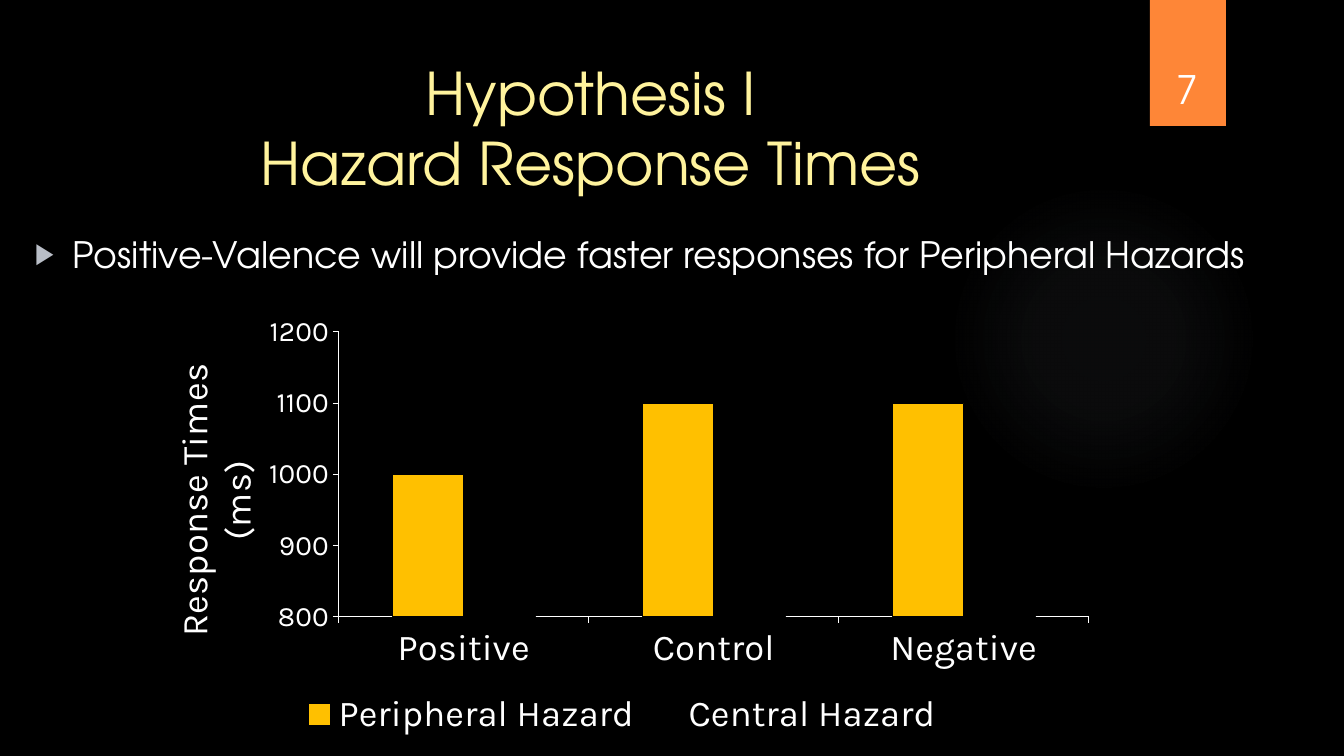
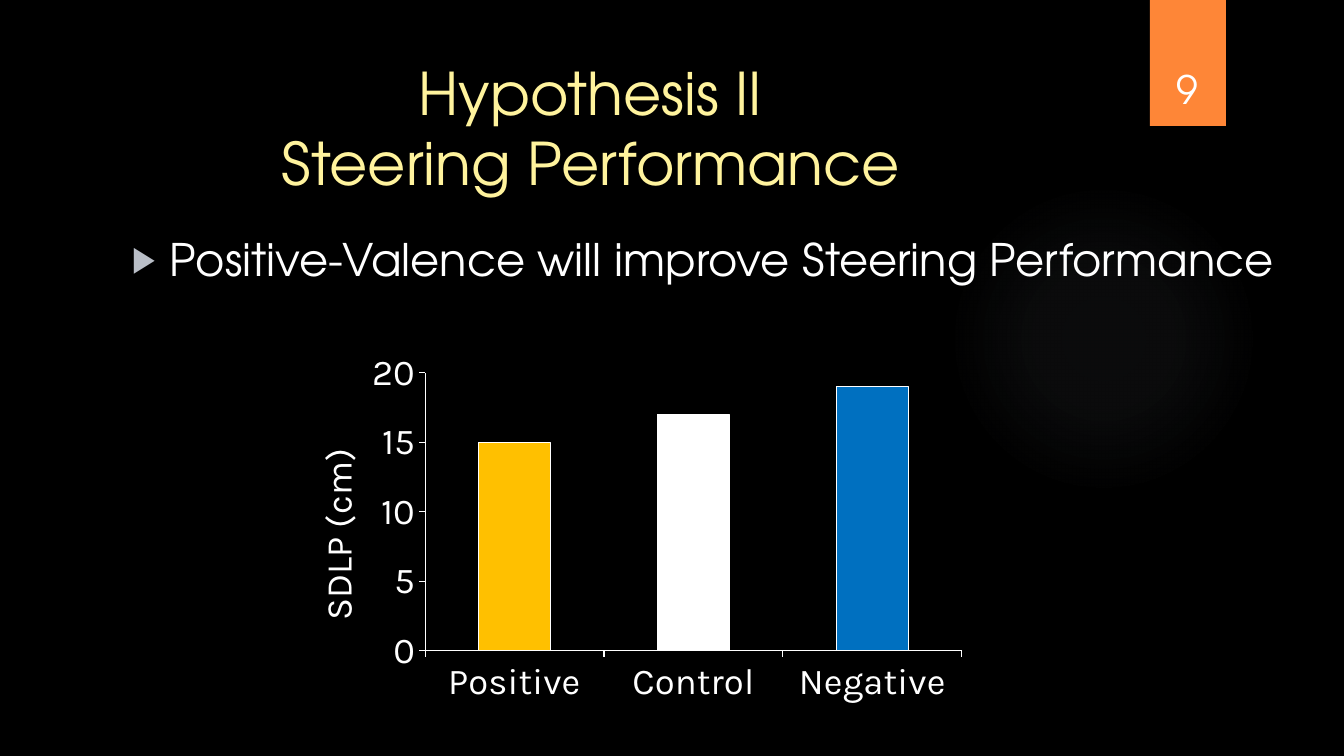
from lxml import etree
from pptx import Presentation
from pptx.chart.data import CategoryChartData
from pptx.dml.color import RGBColor
from pptx.enum.chart import XL_CHART_TYPE, XL_LEGEND_POSITION, XL_TICK_MARK
from pptx.enum.shapes import MSO_SHAPE
from pptx.enum.text import MSO_ANCHOR, PP_ALIGN
from pptx.oxml import parse_xml
from pptx.oxml.ns import nsdecls, qn
from pptx.util import Emu, Pt

COLUMNS = XL_CHART_TYPE.COLUMN_CLUSTERED
LEGEND_BOTTOM = XL_LEGEND_POSITION.BOTTOM
TICK_OUT, TICK_NONE = XL_TICK_MARK.OUTSIDE, XL_TICK_MARK.NONE
RECT, OVAL = MSO_SHAPE.RECTANGLE, MSO_SHAPE.OVAL
TOP, MIDDLE, BOTTOM = MSO_ANCHOR.TOP, MSO_ANCHOR.MIDDLE, MSO_ANCHOR.BOTTOM
LEFT, CENTER = PP_ALIGN.LEFT, PP_ALIGN.CENTER

SLIDE_W, SLIDE_H = 1344, 756
EMU_PER_PX = 12192000 / SLIDE_W
HEAD_FONT, CHART_FONT = "TeX Gyre Adventor", "Karla"
COLORS = {
    "back": "000000", "text": "FFFFFF", "title": "FFF39D", "tag": "FE8637",
    "bullet": "B9BEC7", "glow": "969EAB", "yellow": "FFC000", "blue": "0070C0",
}
GLOW_BOX = (949, 184, 310, 310)
TAG_BOX = (1150, 0, 76, 126)
NUMBER_BOX = (1141, 32, 93, 85)
TITLE_BOX = (72, 50, 1037, 154)
BULLET_INDENT = 38
GLOW_STOPS = ((0, 7), (36, 6), (69, 0))


def px(n):
    return Emu(round(n * EMU_PER_PX))


def place(box):
    return [px(n) for n in box]


def rgb(name):
    return RGBColor.from_string(COLORS[name])


def style_font(font, size, color="text", name=CHART_FONT):
    font.size, font.name, font.bold = Pt(size), name, False
    font.color.rgb = rgb(color)


def add_text(slide, box, lines, size, color="text", align=LEFT, anchor=TOP):
    """Add one paragraph whose lines are parted by line breaks."""
    tf = slide.shapes.add_textbox(*place(box)).text_frame
    tf.word_wrap, tf.vertical_anchor = True, anchor
    p = tf.paragraphs[0]
    p.alignment = align
    for i, line in enumerate(lines):
        if i:
            p.add_line_break()
        r = p.add_run()
        r.text = line
        style_font(r.font, size, color, HEAD_FONT)
    return p


def add_bullet(slide, box, text, size):
    p = add_text(slide, box, [text], size)
    pPr = p._p.get_or_add_pPr()
    pPr.set("marL", str(px(BULLET_INDENT)))
    pPr.set("indent", str(-px(BULLET_INDENT)))
    color = etree.SubElement(pPr, qn("a:buClr"))
    etree.SubElement(color, qn("a:srgbClr"), val=COLORS["bullet"])
    etree.SubElement(pPr, qn("a:buSzPct"), val="80000")
    etree.SubElement(pPr, qn("a:buFont"), typeface="Arial")
    etree.SubElement(pPr, qn("a:buChar"), char="▶")


def add_shape(slide, kind, box, color):
    sp = slide.shapes.add_shape(kind, *place(box))
    sp.shadow.inherit = False
    sp.fill.solid()
    sp.fill.fore_color.rgb = rgb(color)
    sp.line.fill.background()
    return sp


def add_glow(slide, box):
    sp = add_shape(slide, OVAL, box, "glow")
    stops = "".join(
        f'<a:gs pos="{pos}000"><a:srgbClr val="{COLORS["glow"]}">'
        f'<a:alpha val="{alpha}000"/></a:srgbClr></a:gs>'
        for pos, alpha in GLOW_STOPS)
    grad = parse_xml(
        f'<a:gradFill {nsdecls("a")} rotWithShape="1"><a:gsLst>{stops}</a:gsLst>'
        '<a:path path="circle"><a:fillToRect l="50000" t="50000" r="50000" '
        'b="50000"/></a:path></a:gradFill>')
    spPr = sp._element.spPr
    spPr.replace(spPr.find(qn("a:solidFill")), grad)


def add_frame(slide, title_lines, number):
    """Add what every slide carries: glow, number tag and title."""
    add_glow(slide, GLOW_BOX)
    add_shape(slide, RECT, TAG_BOX, "tag")
    add_text(slide, TITLE_BOX, title_lines, 42, "title", CENTER, MIDDLE)
    add_text(slide, NUMBER_BOX, [number], 28, align=CENTER, anchor=BOTTOM)


def set_layout(parent, index, chart_box, left, top, width=None, height=None):
    """Fix a chart part at px offsets from the corner of the chart."""
    old = parent.find(qn("c:layout"))
    if old is not None:
        parent.remove(old)
    layout = etree.Element(qn("c:layout"))
    manual = etree.SubElement(layout, qn("c:manualLayout"))
    values = []
    if width:
        values.append(("layoutTarget", "inner"))
    values += [("xMode", "edge"), ("yMode", "edge")]
    chart_w, chart_h = chart_box[2:]
    for tag, n, whole in (("x", left, chart_w), ("y", top, chart_h),
                          ("w", width, chart_w), ("h", height, chart_h)):
        if n is not None:
            values.append((tag, f"{n / whole:.4f}"))
    for tag, val in values:
        etree.SubElement(manual, qn(f"c:{tag}"), val=val)
    parent.insert(index, layout)


def style_axis(axis, size):
    axis.has_major_gridlines = False
    axis.major_tick_mark, axis.minor_tick_mark = TICK_OUT, TICK_NONE
    axis.format.line.color.rgb = rgb("text")
    axis.format.line.width = Pt(0.75)
    style_font(axis.tick_labels.font, size)


def paint(part, fill, line):
    part.format.fill.solid()
    part.format.fill.fore_color.rgb = rgb(fill)
    part.format.line.color.rgb = rgb(line)
    part.format.line.width = Pt(0.75)


def add_columns(slide, box, plot, series, scale, axis_title, title_at, label_size):
    """Add a column chart; plot and title_at are offsets within box."""
    data = CategoryChartData()
    data.categories = ["Positive", "Control", "Negative"]
    for name, values in series:
        data.add_series(name, values)
    chart = slide.shapes.add_chart(COLUMNS, *place(box), data).chart
    chart.has_title = chart.has_legend = False
    style_font(chart.font, 10, name=HEAD_FONT)
    chart.plots[0].gap_width, chart.plots[0].overlap = 150, 0
    chart.plots[0].vary_by_categories = False
    style_axis(chart.category_axis, 26)
    axis = chart.value_axis
    style_axis(axis, label_size)
    axis.minimum_scale, axis.maximum_scale, axis.major_unit = scale
    r = axis.axis_title.text_frame.paragraphs[0].add_run()
    r.text = axis_title
    style_font(r.font, 26)
    title = axis.axis_title._element
    body = next(title.iter(qn("a:bodyPr")))
    body.set("rot", "-5400000")
    body.set("vert", "horz")
    set_layout(title, 1, box, *title_at)
    set_layout(next(chart._chartSpace.iter(qn("c:plotArea"))), 0, box, *plot)
    for s in chart.plots[0].series:
        s.invert_if_negative = False
    return chart


def build_response_times(slide):
    add_frame(slide, ["Hypothesis I", "Hazard Response Times"], "7")
    add_bullet(slide, (25, 227, 1319, 463),
               "Positive-Valence will provide faster responses for Peripheral Hazards", 26)
    chart = add_columns(
        slide, (136, 307, 973, 436), (203, 25, 750, 285),
        [("Peripheral Hazard", (1000, 1100, 1100)),
         ("Central Hazard", (1100, 1100, 1000))],
        (800, 1200, 100), "Response Times (ms)", (27, 50), 20)
    for s, color in zip(chart.plots[0].series, ("yellow", "back")):
        paint(s, color, "back")
    chart.has_legend = True
    chart.legend.position = LEGEND_BOTTOM
    chart.legend.include_in_layout = False
    style_font(chart.legend.font, 26)


def build_steering(slide):
    add_frame(slide, ["Hypothesis II", "Steering Performance"], "9")
    add_bullet(slide, (122, 227, 1222, 463),
               "Positive-Valence will improve Steering Performance", 32)
    chart = add_columns(
        slide, (275, 345, 701, 367), (150, 28, 537, 278),
        [("Series 1", (15, 17, 19))],
        (0, 20, 5), "SDLP (cm)", (32, 97), 26)
    s = chart.plots[0].series[0]
    paint(s, "tag", "text")
    for i, color in enumerate(("yellow", "text", "blue")):
        paint(s.points[i], color, "text")


def main():
    prs = Presentation()
    prs.slide_width, prs.slide_height = px(SLIDE_W), px(SLIDE_H)
    back = prs.slide_master.background.fill
    back.solid()
    back.fore_color.rgb = rgb("back")
    for build in (build_response_times, build_steering):
        build(prs.slides.add_slide(prs.slide_layouts[6]))
    prs.save("out.pptx")


if __name__ == "__main__":
    main()
